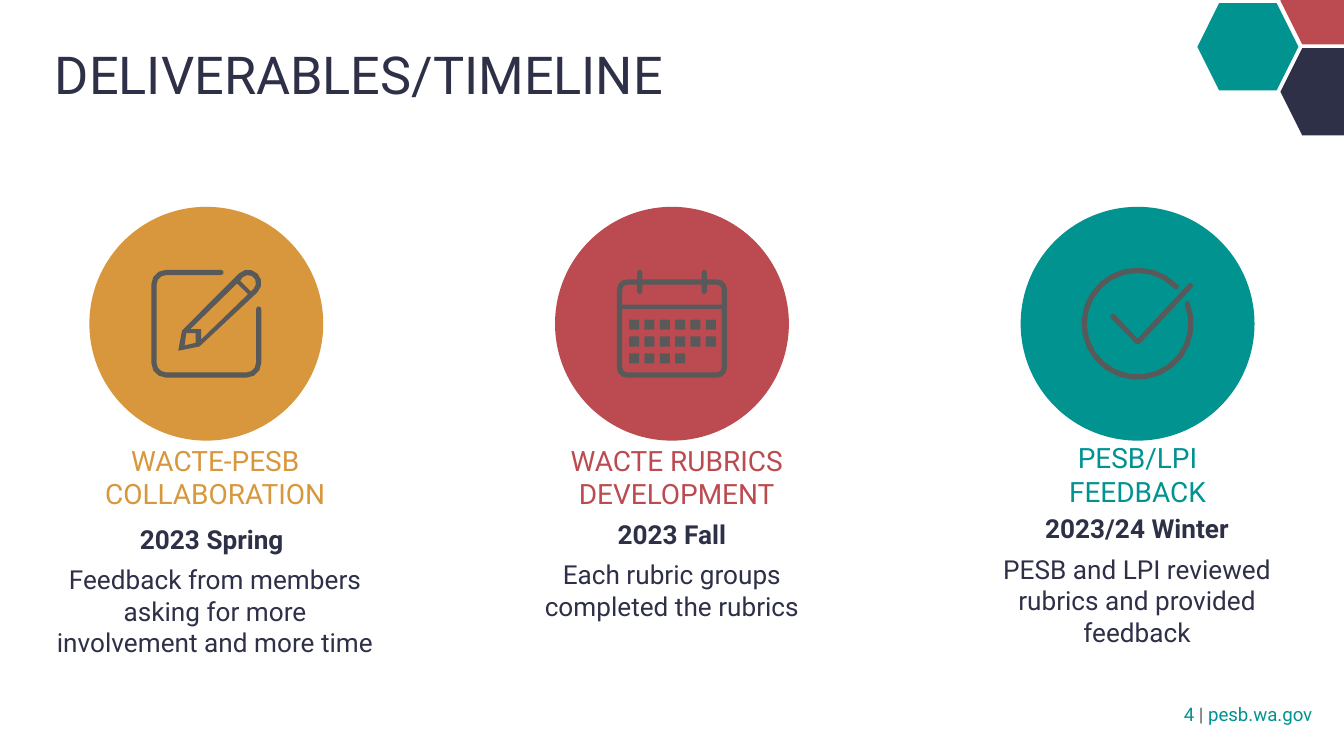
"""Build the deliverables and timeline slide with three milestones."""
import math

import pptx
import pptx.dml.color
import pptx.enum.shapes
import pptx.enum.text
import pptx.util

Cm = pptx.util.Cm
rgb = pptx.dml.color.RGBColor.from_string
PRESET = pptx.enum.shapes.MSO_SHAPE
ALIGN = pptx.enum.text.PP_ALIGN
ANCHOR = pptx.enum.text.MSO_ANCHOR
NAVY, TEAL, RED, GOLD, GRAY = "2D3047", "009390", "BC4B51", "D8973C", "595959"

deck = pptx.Presentation()
deck.slide_width, deck.slide_height = Cm(25.4), Cm(14.29)
slide = deck.slides.add_slide(deck.slide_layouts[6])


def arc(x, y, radius, start, end):
    """Return points along an arc, with degrees running clockwise from the right."""
    steps = max(2, round(abs(end - start) * math.sqrt(radius) / 15))
    angles = [math.radians(start + (end - start) * i / steps) for i in range(steps + 1)]
    return [(x + radius * math.cos(a), y + radius * math.sin(a)) for a in angles]


def write(place, inset, anchor, align, size, paragraphs, gap=0):
    """Add a text box whose paragraphs are lists of (text, colour, bold) runs."""
    frame = slide.shapes.add_textbox(*map(Cm, place)).text_frame
    frame.word_wrap = True
    frame.vertical_anchor = anchor
    frame.margin_left = frame.margin_right = Cm(inset[0])
    frame.margin_top = frame.margin_bottom = Cm(inset[1])
    for index, runs in enumerate(paragraphs):
        paragraph = frame.paragraphs[0] if index == 0 else frame.add_paragraph()
        paragraph.alignment = align
        if index and gap:
            paragraph.space_before = paragraph.space_after = pptx.util.Pt(gap)
        for text, colour, bold in runs:
            run = paragraph.add_run()
            run.text = text
            run.font.name = "Roboto"
            run.font.size = pptx.util.Pt(size)
            run.font.bold = bold
            run.font.color.rgb = rgb(colour)


edit_icon = [
    arc(0.28, -0.97, 0.05, 90, -90)
    + arc(-0.76, -0.74, 0.28, 270, 180)
    + arc(-0.76, 0.74, 0.28, 180, 90)
    + arc(0.76, 0.74, 0.28, 90, 0)
    + arc(0.99, -0.28, 0.05, 0, -180)
    + arc(0.76, 0.74, 0.18, 0, 90)
    + arc(-0.76, 0.74, 0.18, 90, 180)
    + arc(-0.76, -0.74, 0.18, 180, 270),
    [(-0.46, 0.13), (-0.53, 0.51), (-0.13, 0.43)] + arc(0.79, -0.77, 0.25, 45, -135),
    [(0.64, -0.81), (0.84, -0.61)] + arc(0.79, -0.77, 0.15, 45, -135),
    [(0.58, -0.76), (0.79, -0.56), (-0.1, 0.3), (-0.1, 0.1), (-0.3, 0.1)],
    [(-0.38, 0.18), (-0.2, 0.18), (-0.2, 0.36), (-0.41, 0.41)],
]

calendar_outline = arc(-0.85, -0.65, 0.19, 180, 270)
calendar_header = arc(-0.85, -0.65, 0.09, 180, 270)
for ring in (-0.61, 0.61):
    calendar_outline += [(ring - 0.05, -0.84), *arc(ring, -0.97, 0.05, 180, 360), (ring + 0.05, -0.84)]
    calendar_header += [(ring - 0.05, -0.74), *arc(ring, -0.61, 0.05, 180, 0), (ring + 0.05, -0.74)]
calendar_outline += arc(0.85, -0.65, 0.19, 270, 360) + arc(0.85, 0.83, 0.19, 0, 90) + arc(-0.85, 0.83, 0.19, 90, 180)
calendar_header += arc(0.85, -0.65, 0.09, 270, 360) + [(0.94, -0.36), (-0.94, -0.36)]
calendar_page = [(-0.94, -0.28), (0.94, -0.28)] + arc(0.85, 0.83, 0.09, 0, 90) + arc(-0.85, 0.83, 0.09, 90, 180)
calendar_icon = [calendar_outline, calendar_header, calendar_page]
for row, days in enumerate((6, 6, 4)):
    for day in range(days):
        x, y = -0.81 + 0.29 * day, -0.08 + 0.32 * row
        calendar_icon.append([(x, y), (x + 0.19, y), (x + 0.19, y + 0.19), (x, y + 0.19)])

check_icon = [
    arc(0, 0, 1.06, -22, 316)
    + arc(0.73, -0.7, 0.05, 316, 496)
    + arc(0, 0, 0.96, 316, -22)
    + arc(0.94, -0.38, 0.05, 158, 338),
    [(0, 0.28)]
    + arc(-0.47, -0.14, 0.05, -45, -225)
    + [(-0.03, 0.38), (0.04, 0.38)]
    + arc(1, -0.72, 0.05, 45, -135),
]

fills = []
for left, top, colour in ((22.63, 0.06, TEAL), (24.2, 0.91, NAVY), (24.2, -0.81, RED)):
    hexagon = slide.shapes.add_shape(PRESET.HEXAGON, Cm(left), Cm(top), Cm(1.91), Cm(1.65))
    hexagon.adjustments[0] = 0.25
    fills.append((hexagon, colour))

write((0.79, 0.55, 19.48, 1.6), (0.25, 0.25), ANCHOR.TOP, ALIGN.LEFT, 28,
      [[("DELIVERABLES/TIMELINE", NAVY, False)]])

milestones = [
    (GOLD, edit_icon, ["WACTE-PESB COLLABORATION"], (1.01, 8.57, 6.12, 0.89),
     [("2023 Spring", NAVY, True), (" ", NAVY, False)],
     "Feedback from members asking for more involvement and more time",
     (0.84, 9.79, 6.45, 3.53)),
    (RED, calendar_icon, ["WACTE RUBRICS DEVELOPMENT"], (10.53, 8.71, 4.52, 0.61),
     [("2023 Fall", NAVY, True)], "Each rubric groups completed the rubrics",
     (9.64, 9.69, 6.12, 3.53)),
    (TEAL, check_icon, ["PESB/LPI", "FEEDBACK"], (19.58, 8.66, 3.84, 0.61),
     [("2023/24 Winter", NAVY, True)], "PESB and LPI reviewed rubrics and provided feedback",
     (18.43, 9.59, 6.12, 3.53)),
]
for index, (colour, icon, heading, heading_place, date, detail, detail_place) in enumerate(milestones):
    centre_x, centre_y = 3.9 + 8.8 * index, 6.12
    circle = slide.shapes.add_shape(
        PRESET.OVAL, Cm(centre_x - 2.21), Cm(centre_y - 2.21), Cm(4.42), Cm(4.42))
    fills.append((circle, colour))

    contours = [[(Cm(x), Cm(y)) for x, y in contour] for contour in icon]
    builder = slide.shapes.build_freeform(*contours[0][0])
    for position, contour in enumerate(contours):
        if position:
            builder.move_to(*contour[0])
        builder.add_line_segments(contour[1:], close=True)
    fills.append((builder.convert_to_shape(Cm(centre_x), Cm(centre_y)), GRAY))

    write(heading_place, (0.1, 0.05), ANCHOR.MIDDLE, ALIGN.CENTER, 15,
          [[(line, colour, False)] for line in heading])
    write(detail_place, (0.22, 0.1), ANCHOR.TOP, ALIGN.CENTER, 14,
          [date, [(detail, NAVY, False)]], gap=5)

for shape, colour in fills:
    shape.shadow.inherit = False
    shape.fill.solid()
    shape.fill.fore_color.rgb = rgb(colour)
    shape.line.fill.background()

write((20.25, 12.95, 4.8, 1.09), (0.25, 0.25), ANCHOR.MIDDLE, ALIGN.RIGHT, 10,
      [[("4", TEAL, False), (" | ", GRAY, False), ("pesb.wa.gov", TEAL, False)]])

deck.save("out.pptx")
